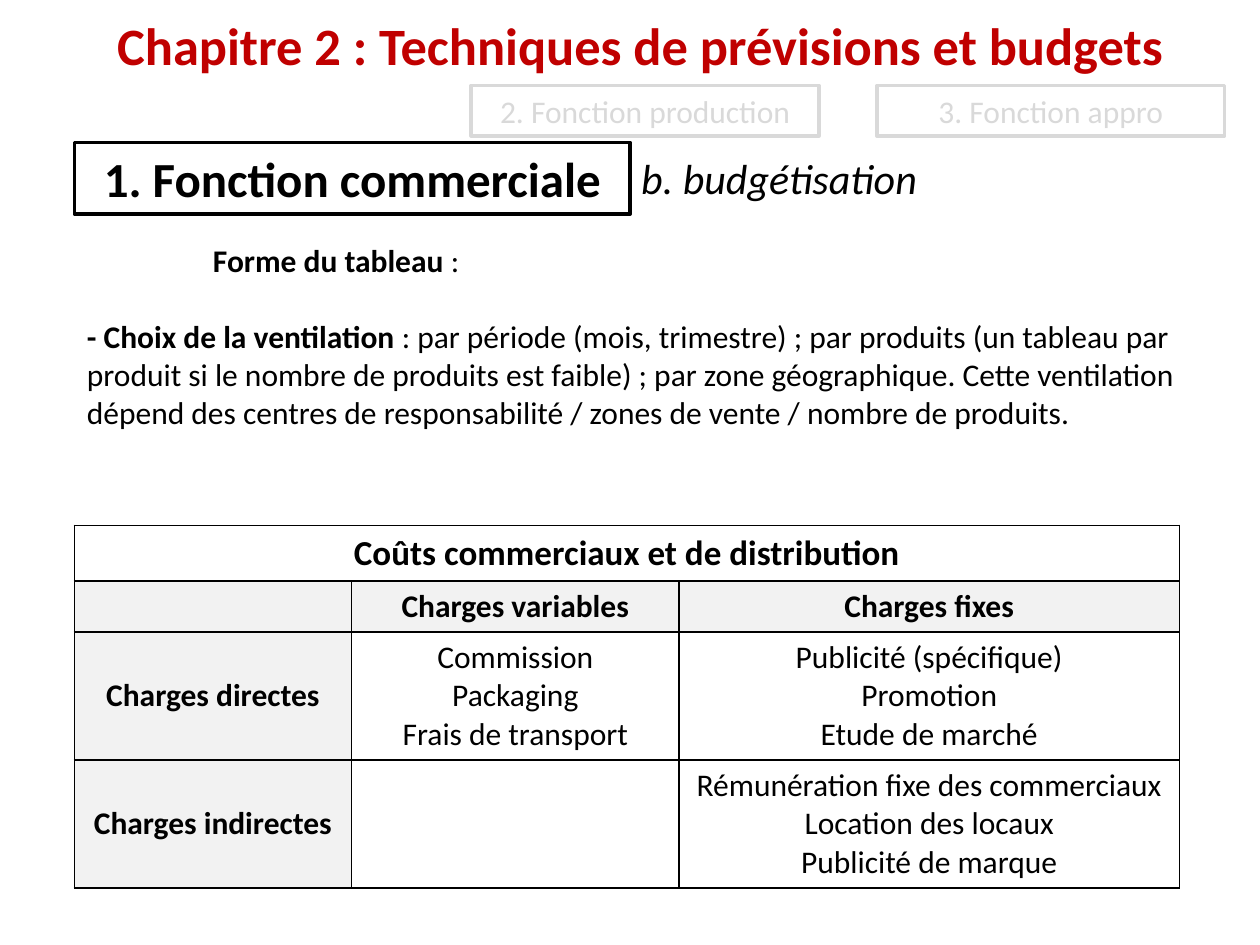
from dataclasses import dataclass
from typing import NamedTuple

from lxml import etree
from pptx import Presentation, util as u
from pptx.dml.color import RGBColor
from pptx.enum import shapes, text
from pptx.oxml.ns import qn

COLS, ROWS = 100, 75


@dataclass(frozen=True)
class Theme:
    font: str = "Calibri"
    ink: str = "000000"
    accent: str = "C00000"
    muted: str = "D9D9D9"
    paper: str = "FFFFFF"
    shade: str = "F2F2F2"
    title: int = 30
    section: int = 28
    subtitle: int = 24
    heading: int = 20
    body: int = 18
    line: int = 22


class Box(NamedTuple):
    col: float
    row: float
    cols: float
    rows: float


class Tab(NamedTuple):
    label: str
    box: Box
    size: int
    color: str
    bold: bool


T = Theme()
MARGIN = 5.9
TABS = [
    Tab("1. Fonction commerciale", Box(MARGIN, 11.3, 44.1, 5.7), T.section, T.ink, True),
    Tab("2. Fonction production", Box(37.4, 6.8, 27.6, 4), T.body, T.muted, False),
    Tab("3. Fonction appro", Box(69.6, 6.8, 27.6, 4), T.body, T.muted, False),
]
TABLE_BOX = Box(MARGIN, 41.7, 87.7, 28.4)
TABLE_COLS = [22, 26, 39.7]
TABLE_ROWS = [4.4, 4, 10, 10]
CELLS = [
    ["Coûts commerciaux et de distribution", "", ""],
    ["", "Charges variables", "Charges fixes"],
    ["Charges directes", "Commission\nPackaging\nFrais de transport",
     "Publicité (spécifique)\nPromotion\nEtude de marché"],
    ["Charges indirectes", "",
     "Rémunération fixe des commerciaux\nLocation des locaux\nPublicité de marque"],
]

prs = Presentation()
prs.slide_width, prs.slide_height = u.Inches(10), u.Inches(7.5)


def across(cols: float) -> int:
    return round(prs.slide_width * cols / COLS)


def down(rows: float) -> int:
    return round(prs.slide_height * rows / ROWS)


def place(box: Box) -> tuple[int, int, int, int]:
    return across(box.col), down(box.row), across(box.cols), down(box.rows)


def move(sp, box: Box) -> None:
    sp.left, sp.top, sp.width, sp.height = place(box)


def add_run(p, label: str, *, size: int = T.body, color: str = T.ink,
            bold: bool = False, italic: bool = False) -> None:
    r = p.add_run()
    r.text = label
    f = r.font
    f.name, f.size, f.bold, f.italic = T.font, u.Pt(size), bold, italic
    f.color.rgb = RGBColor.from_string(color)


def setup(tf, anchor=text.MSO_ANCHOR.TOP) -> None:
    tf.word_wrap = True
    tf.auto_size = text.MSO_AUTO_SIZE.NONE
    tf.vertical_anchor = anchor


def add_tab(s, tab: Tab) -> None:
    sp = s.shapes.add_shape(shapes.MSO_SHAPE.RECTANGLE, *place(tab.box))
    sp.shadow.inherit = False
    sp.fill.solid()
    sp.fill.fore_color.rgb = RGBColor.from_string(T.paper)
    sp.line.color.rgb = RGBColor.from_string(tab.color)
    sp.line.width = u.Pt(2)
    setup(sp.text_frame, text.MSO_ANCHOR.MIDDLE)
    p = sp.text_frame.paragraphs[0]
    p.alignment = text.PP_ALIGN.CENTER
    add_run(p, tab.label, size=tab.size, color=tab.color, bold=tab.bold)


def add_item(p, lead: str, rest: str, *, indent: float = 0, before: float = 0) -> None:
    pPr = p._p.get_or_add_pPr()
    pPr.set("marL", str(across(indent)))
    pPr.set("indent", "0")
    p.space_before = u.Pt(before)
    etree.SubElement(pPr, qn("a:buNone"))
    add_run(p, lead, bold=True)
    add_run(p, rest)


def add_borders(cell) -> None:
    tcPr = cell._tc.get_or_add_tcPr()
    for i, side in enumerate(("lnL", "lnR", "lnT", "lnB")):
        ln = etree.Element(qn(f"a:{side}"), w=str(u.Pt(1)))
        fill = etree.SubElement(ln, qn("a:solidFill"))
        etree.SubElement(fill, qn("a:srgbClr"), val=T.ink)
        tcPr.insert(i, ln)


def fill_cell(cell, label: str, *, size: int, bold: bool, fill: str) -> None:
    cell.fill.solid()
    cell.fill.fore_color.rgb = RGBColor.from_string(fill)
    cell.vertical_anchor = text.MSO_ANCHOR.MIDDLE
    add_borders(cell)
    for i, line in enumerate(label.split("\n") if label else []):
        tf = cell.text_frame
        p = tf.add_paragraph() if i else tf.paragraphs[0]
        p.alignment = text.PP_ALIGN.CENTER
        add_run(p, line, size=size, bold=bold)


def add_costs(s) -> None:
    table = s.shapes.add_table(len(TABLE_ROWS), len(TABLE_COLS), *place(TABLE_BOX)).table
    for col, width in zip(table.columns, TABLE_COLS):
        col.width = across(width)
    for row, height in zip(table.rows, TABLE_ROWS):
        row.height = down(height)
    for i, labels in enumerate(CELLS):
        for j, label in enumerate(labels):
            header = i == 1 or (i > 1 and j == 0)
            fill_cell(table.cell(i, j), label, size=T.body if i else T.heading,
                      bold=header or i == 0, fill=T.shade if header else T.paper)
    table.cell(0, 0).merge(table.cell(0, len(TABLE_COLS) - 1))


def main() -> None:
    s = prs.slides.add_slide(prs.slide_layouts[1])
    title, body = s.placeholders

    move(title, Box(8.3, 0.5, 87.4, 6.1))
    setup(title.text_frame)
    p = title.text_frame.paragraphs[0]
    p.alignment = text.PP_ALIGN.LEFT
    add_run(p, "Chapitre 2 : Techniques de prévisions et budgets",
            size=T.title, color=T.accent, bold=True)

    for tab in TABS:
        add_tab(s, tab)

    sp = s.shapes.add_textbox(*place(Box(49.9, 11.6, 43.7, 5)))
    setup(sp.text_frame)
    add_run(sp.text_frame.paragraphs[0], "b. budgétisation", size=T.subtitle, italic=True)

    move(body, Box(MARGIN, 18.6, 90.6, 16.2))
    tf = body.text_frame
    setup(tf)
    add_item(tf.paragraphs[0], "Forme du tableau ", ":", indent=10)
    add_item(tf.add_paragraph(), "- Choix de la ventilation",
             " : par période (mois, trimestre) ; par produits (un tableau par produit si le "
             "nombre de produits est faible) ; par zone géographique. Cette ventilation dépend "
             "des centres de responsabilité / zones de vente / nombre de produits.",
             before=T.line)

    add_costs(s)
    prs.save("out.pptx")


if __name__ == "__main__":
    main()
